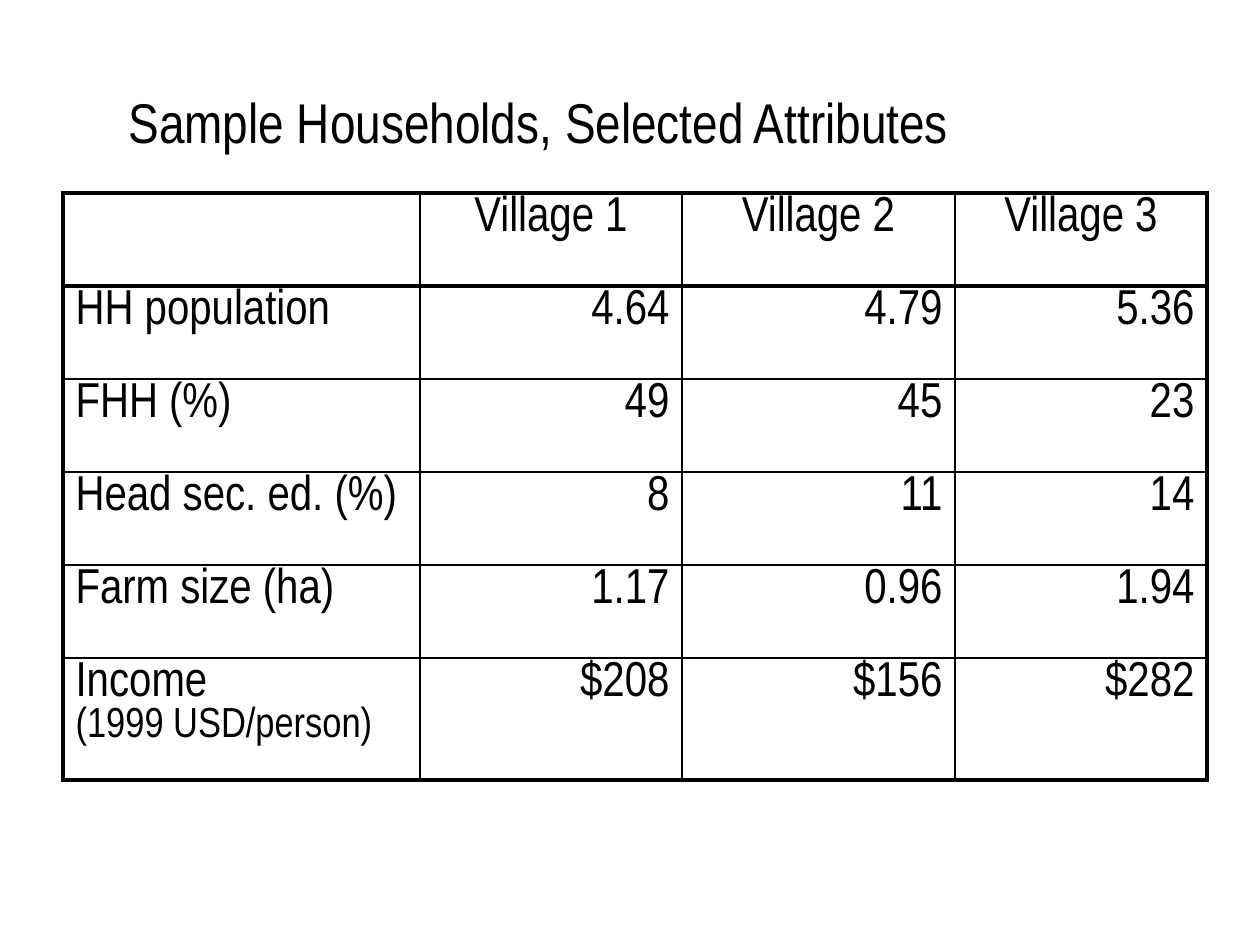
"""Build a slide with a table of sample household attributes by village."""
from lxml import etree
from pptx import Presentation
from pptx.dml.color import RGBColor
from pptx.enum.text import MSO_ANCHOR, MSO_AUTO_SIZE, PP_ALIGN
from pptx.oxml.ns import qn
from pptx.util import Emu, Pt

LEFT, CENTER, RIGHT = PP_ALIGN.LEFT, PP_ALIGN.CENTER, PP_ALIGN.RIGHT
MIDDLE, NO_FIT = MSO_ANCHOR.MIDDLE, MSO_AUTO_SIZE.NONE
TITLE_ONLY = 5
EMU_PER_PX = 914400 / 126
COLORS = {"ink": "000000"}
THIN, THICK = 1, 2.25

COLUMNS = [357, 262, 273, 252]
ROW_HEIGHTS = [93] * 5 + [122]
ROWS = [
    ["", "Village 1", "Village 2", "Village 3"],
    ["HH population", "4.64", "4.79", "5.36"],
    ["FHH (%)", "49", "45", "23"],
    ["Head sec. ed. (%)", "8", "11", "14"],
    ["Farm size (ha)", "1.17", "0.96", "1.94"],
    ["Income", "$208", "$156", "$282"],
]
INCOME_UNIT = "(1999 USD/person)"


def px(n):
    return Emu(round(n * EMU_PER_PX))


class Deck:
    """Hold the style and the current slide."""

    font = "Arial Narrow"

    def __init__(self, width, height):
        self.prs = Presentation()
        self.prs.slide_width, self.prs.slide_height = px(width), px(height)
        self.slide = self.prs.slides.add_slide(self.prs.slide_layouts[TITLE_ONLY])

    def style(self, font, size):
        font.name, font.size = self.font, Pt(size)
        font.color.rgb = RGBColor.from_string(COLORS["ink"])

    def title(self, text, x, y, w, h):
        sp = self.slide.shapes.title
        sp.left, sp.top, sp.width, sp.height = px(x), px(y), px(w), px(h)
        tf = sp.text_frame
        tf.text, tf.word_wrap = text, True
        tf.auto_size, tf.vertical_anchor = NO_FIT, MIDDLE
        p = tf.paragraphs[0]
        p.alignment = LEFT
        self.style(p.font, 32)

    def border(self, cell, widths):
        tc_pr = cell._tc.get_or_add_tcPr()
        for side, width in zip("LRTB", widths):
            ln = etree.SubElement(tc_pr, qn(f"a:ln{side}"), w=str(Pt(width)))
            fill = etree.SubElement(ln, qn("a:solidFill"))
            etree.SubElement(fill, qn("a:srgbClr"), val=COLORS["ink"])

    def table(self, rows, columns, heights, x, y):
        last_row, last_col = len(rows) - 1, len(columns) - 1
        table = self.slide.shapes.add_table(
            len(rows), len(columns), px(x), px(y), px(sum(columns)), px(sum(heights))
        ).table
        table.first_row = table.horz_banding = False
        for column, width in zip(table.columns, columns):
            column.width = px(width)
        for i, (values, height) in enumerate(zip(rows, heights)):
            table.rows[i].height = px(height)
            for j, value in enumerate(values):
                cell = table.cell(i, j)
                cell.text, cell.margin_top = value, px(3)
                p = cell.text_frame.paragraphs[0]
                p.alignment = LEFT if j == 0 else CENTER if i == 0 else RIGHT
                self.style(p.font, 28)
                thick = (j == 0, j == last_col, i < 2, i in (0, last_row))
                self.border(cell, [THICK if t else THIN for t in thick])
                cell.fill.background()
        return table

    def second_line(self, cell, text, size):
        p = cell.text_frame.paragraphs[0]
        p.add_line_break()
        r = p.add_run()
        r.text = text
        self.style(r.font, size)


def main():
    deck = Deck(1260, 945)
    deck.title("Sample Households, Selected Attributes", 116, 42, 1029, 158)
    table = deck.table(ROWS, COLUMNS, ROW_HEIGHTS, 63, 193)
    deck.second_line(table.cell(len(ROWS) - 1, 0), INCOME_UNIT, 24)
    deck.prs.save("out.pptx")


if __name__ == "__main__":
    main()
